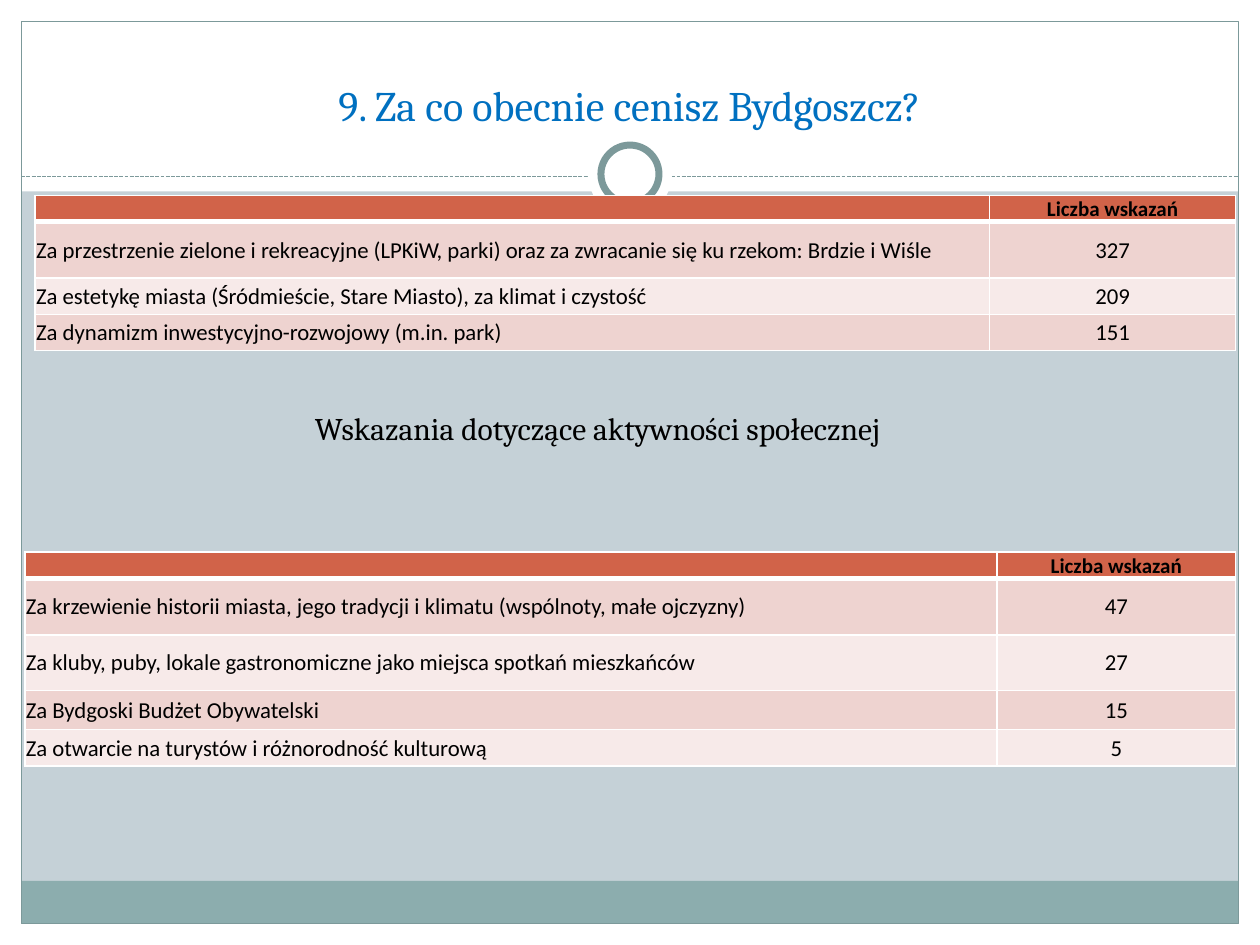
from dataclasses import dataclass

from lxml import etree
from pptx import Presentation
from pptx import util as u
from pptx.dml.color import RGBColor
from pptx.enum import dml, shapes, text
from pptx.oxml.ns import qn

TITLE = "9. Za co obecnie cenisz Bydgoszcz?"
SUBTITLE = "Wskazania dotyczące aktywności społecznej"
COUNT_HEADING = "Liczba wskazań"

# Each answer: wording, number of mentions, row height in cm
CITY_TABLE = {
    "left": 0.71, "top": 3.94, "widths": (19.24, 4.96),
    "answers": [
        ("Za przestrzenie zielone i rekreacyjne (LPKiW, parki) oraz za zwracanie się ku rzekom: "
         "Brdzie i Wiśle", 327, 1.14),
        ("Za estetykę miasta (Śródmieście, Stare Miasto), za klimat i czystość", 209, 0.73),
        ("Za dynamizm inwestycyjno-rozwojowy (m.in. park)", 151, 0.73),
    ],
}
COMMUNITY_TABLE = {
    "left": 0.5, "top": 11.13, "widths": (19.6, 4.81),
    "answers": [
        ("Za krzewienie historii miasta, jego tradycji i klimatu (wspólnoty, małe ojczyzny)", 47, 1.14),
        ("Za kluby, puby, lokale gastronomiczne jako miejsca spotkań mieszkańców", 27, 1.12),
        ("Za Bydgoski Budżet Obywatelski", 15, 0.79),
        ("Za otwarcie na turystów i różnorodność kulturową", 5, 0.73),
    ],
}


@dataclass(frozen=True)
class Theme:
    background: str = "C5D1D7"
    white: str = "FFFFFF"
    black: str = "000000"
    footer: str = "8CADAE"
    outline: str = "7C999A"
    title: str = "0070C0"
    header: str = "D16349"
    bands: tuple = ("EED3D0", "F7EAE9")
    heading_font: str = "Cambria"
    body_font: str = "Calibri"
    title_size: int = 24
    subtitle_size: int = 18
    header_size: int = 12
    body_size: int = 13


THEME = Theme()
WIDTH, HEIGHT = 25.4, 19.05
MARGIN = 0.43
BAND_HEIGHT = 3.86
FOOTER_HEIGHT = 0.86
RULE_Y = 3.56
HEADER_ROW = 0.53


def color(value):
    return RGBColor.from_string(value)


def write(frame, words, *, size, font=THEME.body_font, ink=THEME.black, bold=False,
          align=text.PP_ALIGN.LEFT):
    para = frame.paragraphs[0]
    para.alignment = align
    span = para.add_run()
    span.text = words
    span.font.size = u.Pt(size)
    span.font.name = font
    span.font.bold = bold
    span.font.color.rgb = color(ink)


def add_text(page, words, left, top, width, height, *, anchor=text.MSO_ANCHOR.TOP, **style):
    box = page.shapes.add_textbox(*map(u.Cm, (left, top, width, height)))
    box.text_frame.word_wrap = True
    box.text_frame.vertical_anchor = anchor
    write(box.text_frame, words, **style)
    return box


def add_shape(page, kind, left, top, width, height, fill=None, line=None, weight=0.75):
    shape = page.shapes.add_shape(kind, *map(u.Cm, (left, top, width, height)))
    shape.shadow.inherit = False
    if fill:
        shape.fill.solid()
        shape.fill.fore_color.rgb = color(fill)
    else:
        shape.fill.background()
    if line:
        shape.line.color.rgb = color(line)
        shape.line.width = u.Pt(weight)
    else:
        shape.line.fill.background()


def add_backdrop(page):
    page.background.fill.solid()
    page.background.fill.fore_color.rgb = color(THEME.background)
    rectangle, oval = shapes.MSO_SHAPE.RECTANGLE, shapes.MSO_SHAPE.OVAL
    inner_width, bottom = WIDTH - 2 * MARGIN, HEIGHT - MARGIN
    for area in ((0, bottom, WIDTH, MARGIN), (0, 0, WIDTH, BAND_HEIGHT),
                 (0, 0, MARGIN, HEIGHT), (WIDTH - MARGIN, 0, MARGIN, HEIGHT)):
        add_shape(page, rectangle, *area, fill=THEME.white)
    add_shape(page, rectangle, MARGIN, bottom - FOOTER_HEIGHT, inner_width, FOOTER_HEIGHT,
              fill=THEME.footer)
    add_shape(page, rectangle, MARGIN, MARGIN, inner_width, HEIGHT - 2 * MARGIN,
              line=THEME.outline)

    rule = page.shapes.add_connector(shapes.MSO_CONNECTOR.STRAIGHT, u.Cm(MARGIN), u.Cm(RULE_Y),
                                     u.Cm(WIDTH - MARGIN), u.Cm(RULE_Y))
    rule.line.color.rgb = color(THEME.outline)
    rule.line.width = u.Pt(0.75)
    rule.line.dash_style = dml.MSO_LINE.SQUARE_DOT
    etree.SubElement(rule.element.spPr, qn("a:effectLst"))

    center_y = 3.51
    for diameter, line in ((1.7, None), (1.17, THEME.outline)):
        add_shape(page, oval, (WIDTH - diameter) / 2, center_y - diameter / 2, diameter, diameter,
                  fill=THEME.white, line=line, weight=4)


def set_borders(cell, **weights):
    """Draw white cell borders; weights are points by side: L, R, T, B."""
    properties = cell._tc.get_or_add_tcPr()
    for side in "LRTB":
        line = etree.SubElement(properties, qn(f"a:ln{side}"), w=str(u.Pt(weights.get(side, 1))))
        fill = etree.SubElement(line, qn("a:solidFill"))
        etree.SubElement(fill, qn("a:srgbClr"), val=THEME.white)


def fill_cell(cell, words, fill, borders, **style):
    set_borders(cell, **borders)
    cell.fill.solid()
    cell.fill.fore_color.rgb = color(fill)
    cell.vertical_anchor = text.MSO_ANCHOR.MIDDLE
    cell.margin_left = cell.margin_right = cell.margin_top = u.Cm(0.02)
    cell.margin_bottom = 0
    if words:
        write(cell.text_frame, words, **style)
    else:  # keeps an empty cell from growing to the default type size
        etree.SubElement(cell.text_frame.paragraphs[0]._p, qn("a:endParaRPr"),
                         sz=str(style["size"] * 100))


def add_answers(page, left, top, widths, answers):
    heights = [HEADER_ROW] + [height for _, _, height in answers]
    rows = [("", COUNT_HEADING)] + [(answer, str(count)) for answer, count, _ in answers]
    frame = page.shapes.add_table(len(rows), len(widths), u.Cm(left), u.Cm(top),
                                  u.Cm(sum(widths)), u.Cm(sum(heights)))
    table = frame.table
    for column, width in zip(table.columns, widths):
        column.width = u.Cm(width)
    aligns = (text.PP_ALIGN.LEFT, text.PP_ALIGN.CENTER)
    for index, (row, height) in enumerate(zip(rows, heights)):
        table.rows[index].height = u.Cm(height)
        is_header = index == 0
        fill = THEME.header if is_header else THEME.bands[(index - 1) % 2]
        borders = {0: {"B": 3}, 1: {"T": 3}}.get(index, {})
        size = THEME.header_size if is_header else THEME.body_size
        for position, words in enumerate(row):
            fill_cell(table.cell(index, position), words, fill, borders, size=size,
                      bold=is_header, align=aligns[position])


def main():
    deck = Presentation()
    deck.slide_width, deck.slide_height = u.Cm(WIDTH), u.Cm(HEIGHT)
    page = deck.slides.add_slide(deck.slide_layouts[6])
    add_backdrop(page)
    add_text(page, TITLE, 0.84, 0.64, 23.7, 2.11, anchor=text.MSO_ANCHOR.BOTTOM,
             size=THEME.title_size, font=THEME.heading_font, ink=THEME.title,
             align=text.PP_ALIGN.CENTER)
    add_answers(page, **CITY_TABLE)
    subtitle = add_text(page, SUBTITLE, 6.1, 8.13, 13, 1.02, size=THEME.subtitle_size,
                        font=THEME.heading_font)
    subtitle.text_frame.auto_size = text.MSO_AUTO_SIZE.SHAPE_TO_FIT_TEXT
    add_answers(page, **COMMUNITY_TABLE)
    deck.save("out.pptx")


if __name__ == "__main__":
    main()
